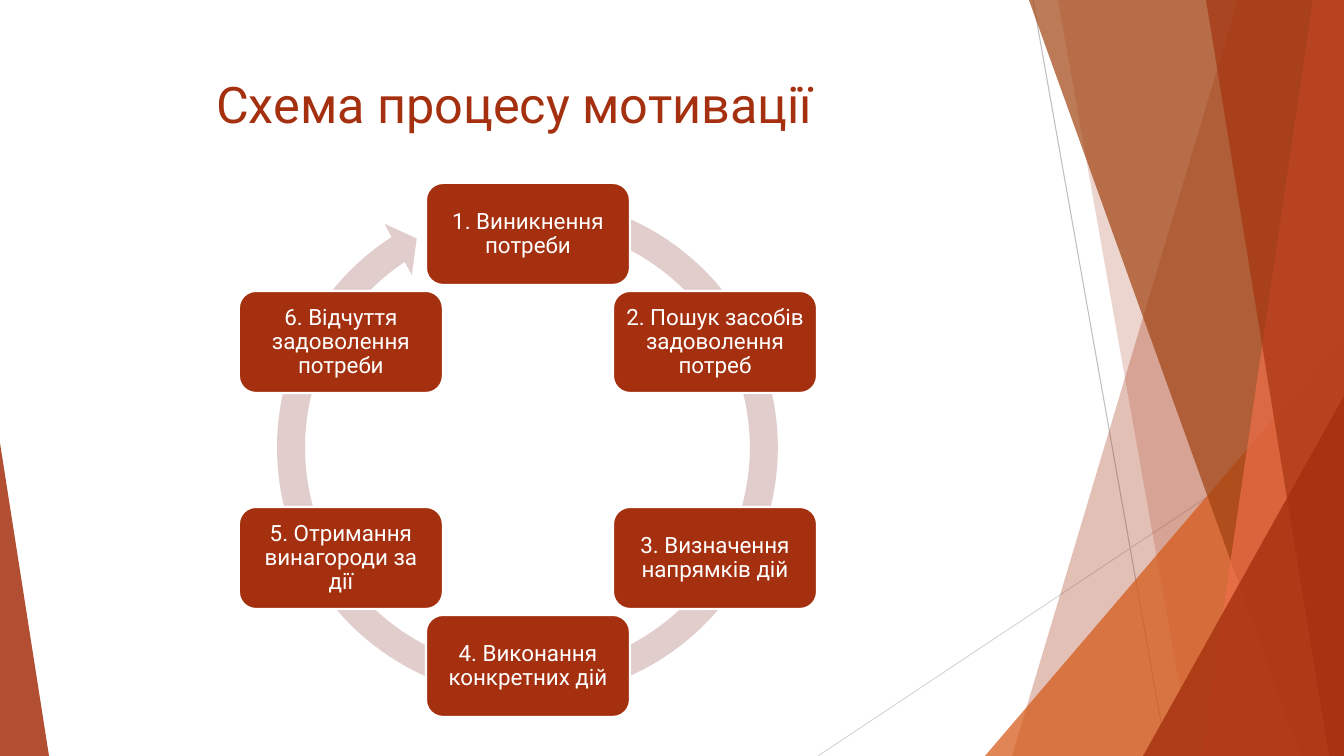
from math import cos, radians, sin
from lxml.etree import SubElement
from pptx import Presentation
from pptx.dml.color import RGBColor
from pptx.enum.shapes import MSO_CONNECTOR, MSO_SHAPE
from pptx.enum.text import MSO_ANCHOR, PP_ALIGN
from pptx.oxml.ns import qn
from pptx.util import Pt

PX = 914400 / 100.8
WIDE, HIGH = 1344, 756
HUES = {"rust": "A5300F", "orange": "D55816", "brown": "A04210", "coral": "EE6E4A",
        "ring": "E1CDCC", "white": "FFFFFF", "gray": "BFBFBF", "pale": "D9D9D9"}


def emu(*sizes):
    return [round(size * PX) for size in sizes]


def paint(shape, hue, alpha=100):
    shape.shadow.inherit = False
    shape.fill.solid()
    shape.fill.fore_color.rgb = RGBColor.from_string(HUES[hue])
    shape.line.fill.background()
    if alpha < 100:
        color = shape.fill._xPr.find(qn("a:solidFill"))[0]
        SubElement(color, qn("a:alpha")).set("val", str(alpha * 1000))


deck = Presentation()
deck.slide_width, deck.slide_height = emu(WIDE, HIGH)
slide = deck.slides.add_slide(deck.slide_layouts[5])
shapes = slide.shapes

for ends, hue in [((1033, 0, 1167, HIGH), "gray"), ((WIDE, 406, 818, HIGH), "pale")]:
    line = shapes.add_connector(MSO_CONNECTOR.STRAIGHT, *emu(*ends))
    line.line.color.rgb = RGBColor.from_string(HUES[hue])
    line.line.width = Pt(0.75)
    SubElement(line._element.spPr, qn("a:effectLst"))

facets = [
    ((1238, 1012), "rust", 30),
    ((1058, 1192), "rust", 20),
    ((985, 336, 359, 420, 1), "orange", 72),
    ((1029, 1301), "brown", 70),
    ((1313, 1202), "coral", 70),
    ((1206, 1329), "rust", 65),
    ((1143, 396, 201, 360, 1), "rust", 80),
    ((0, 443, 49, 313, 0), "rust", 85),
]
for place, hue, alpha in facets:
    if len(place) == 2:
        head, foot = place
        pen = shapes.build_freeform(head, 0, scale=PX)
        pen.add_line_segments([(WIDE, 0), (WIDE, HIGH), (foot, HIGH)], close=True)
        facet = pen.convert_to_shape()
    else:
        facet = shapes.add_shape(MSO_SHAPE.ISOSCELES_TRIANGLE, *emu(*place[:4]))
        facet.adjustments[0] = place[4]
    paint(facet, hue, alpha)

title = shapes.title
title.left, title.top, title.width, title.height = emu(206, 68, 948, 145)
title.text_frame.text = "Схема процесу мотивації"
title.text_frame.vertical_anchor = MSO_ANCHOR.TOP
title.text_frame.word_wrap = True
label = title.text_frame.paragraphs[0]
label.alignment = PP_ALIGN.LEFT
font = label.runs[0].font
font.name, font.size = "Roboto", Pt(36)
font.color.rgb = RGBColor.from_string(HUES["rust"])

ring = shapes.add_shape(MSO_SHAPE.CIRCULAR_ARROW, *emu(262, 182, 531, 531))
for index, value in enumerate([0.05274, 3.1263, 142.119, 171.365, 0.05477]):
    ring.adjustments[index] = value
paint(ring, "ring")

steps = [
    "1. Виникнення потреби",
    "2. Пошук засобів задоволення потреб",
    "3. Визначення напрямків дій",
    "4. Виконання конкретних дій",
    "5. Отримання винагороди за дії",
    "6. Відчуття задоволення потреби",
]
MID_X, MID_Y, RADIUS = 528, 450, 216
BOX_W, BOX_H = 204, 102
for index, step in enumerate(steps):
    angle = radians(360 / len(steps) * index)
    left = MID_X + RADIUS * sin(angle) - BOX_W / 2
    top = MID_Y - RADIUS * cos(angle) - BOX_H / 2
    box = shapes.add_shape(MSO_SHAPE.ROUNDED_RECTANGLE, *emu(left, top, BOX_W, BOX_H))
    paint(box, "rust")
    box.line.color.rgb = RGBColor.from_string(HUES["white"])
    box.line.width = Pt(1.5)
    frame = box.text_frame
    frame.text = step
    frame.word_wrap = True
    frame.vertical_anchor = MSO_ANCHOR.MIDDLE
    frame.margin_left, frame.margin_right, frame.margin_top, frame.margin_bottom = emu(7, 7, 7, 7)
    label = frame.paragraphs[0]
    label.alignment = PP_ALIGN.CENTER
    label.line_spacing = 0.9
    font = label.runs[0].font
    font.name, font.size = "Roboto", Pt(16)
    font.color.rgb = RGBColor.from_string(HUES["white"])

deck.save("out.pptx")
